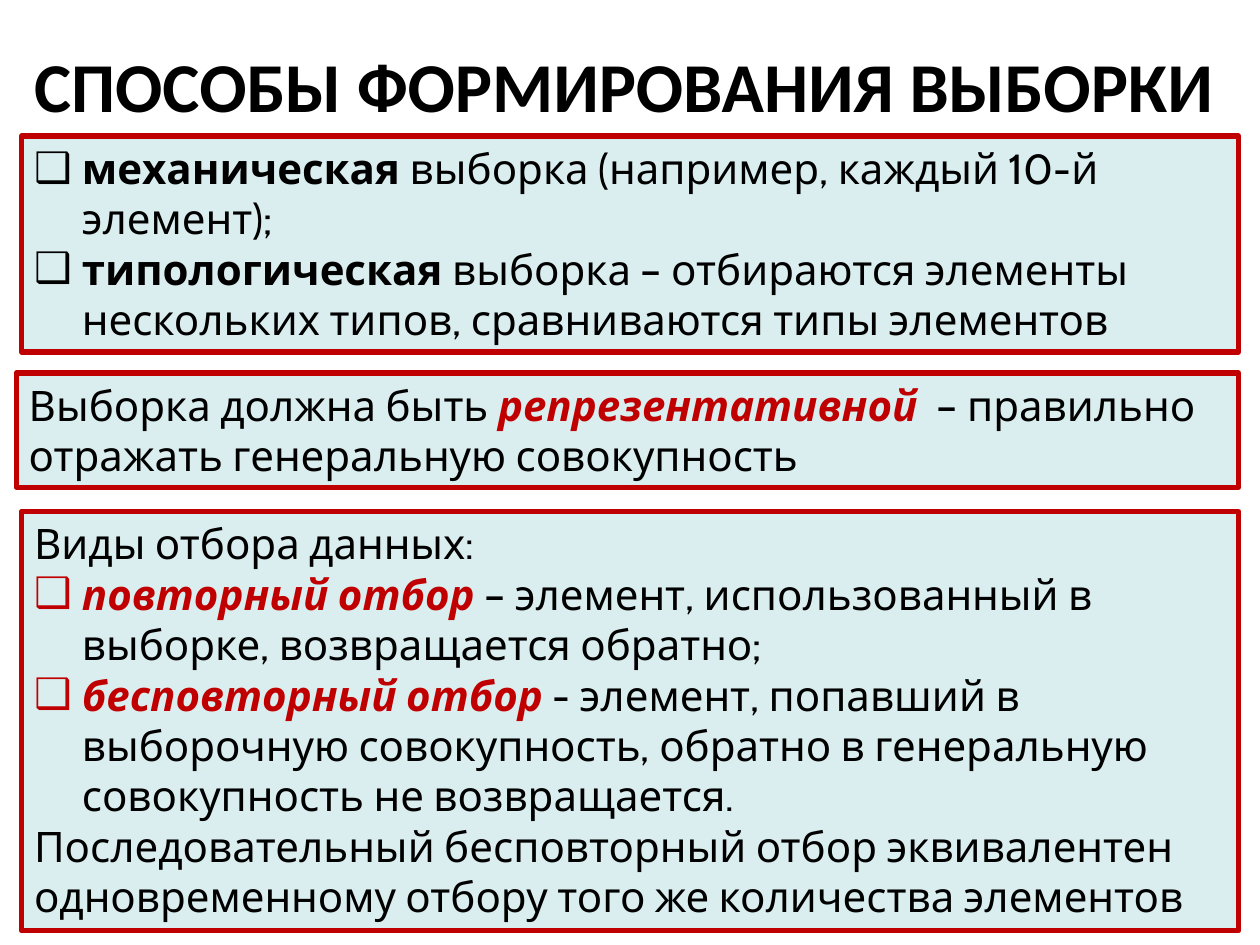
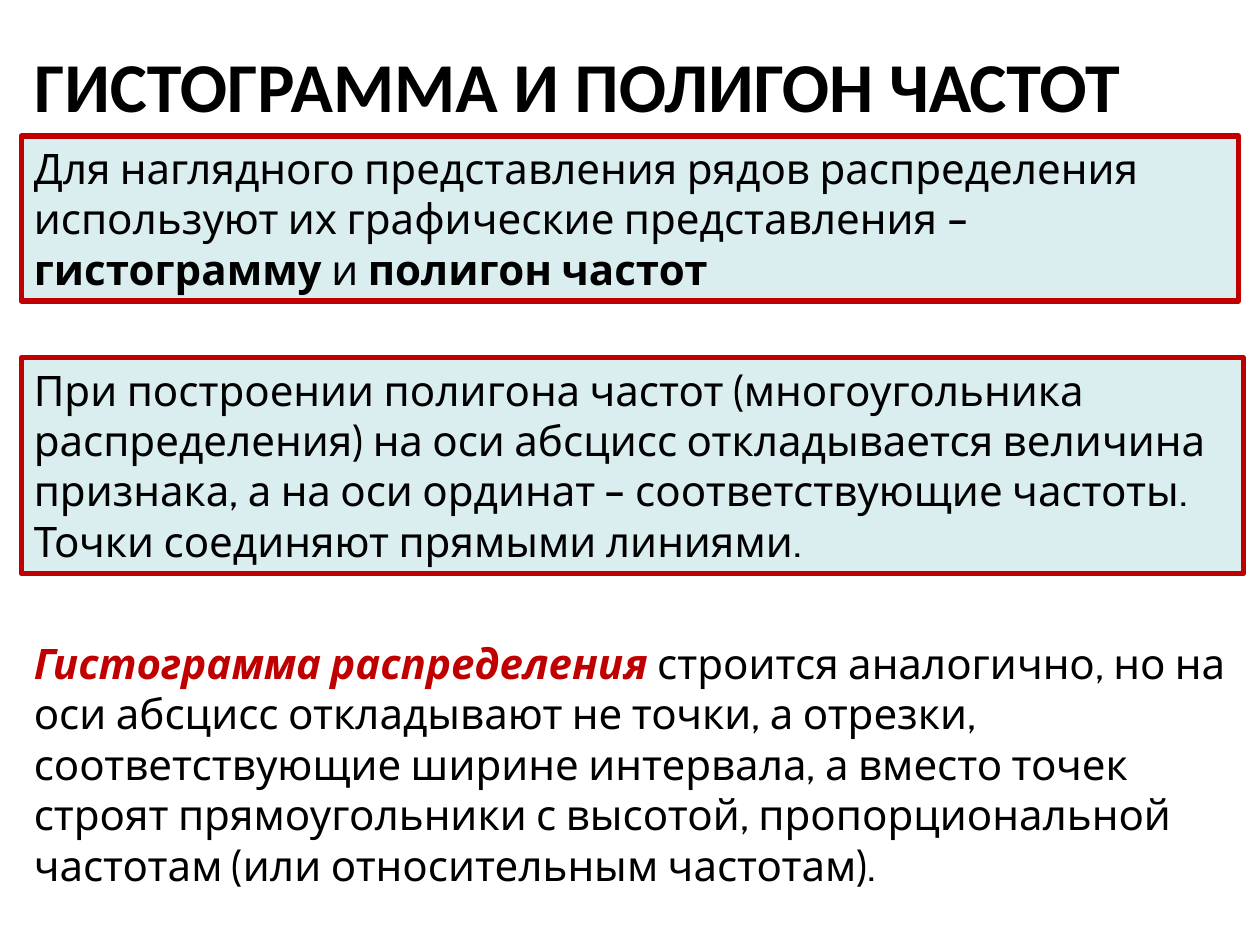
"""Build two slides on sampling methods and frequency charts."""
from lxml.etree import SubElement
from pptx import Presentation
from pptx.dml.color import RGBColor
from pptx.enum.shapes import MSO_SHAPE
from pptx.enum.text import MSO_ANCHOR, MSO_AUTO_SIZE, PP_ALIGN
from pptx.oxml.ns import qn
from pptx.util import Inches, Pt

BLACK = RGBColor(0x00, 0x00, 0x00)
RED = RGBColor(0xC0, 0x00, 0x00)
PALE = RGBColor(0xDA, 0xED, 0xEF)

TITLE_FONT, TITLE_SIZE = "Calibri", 40
BODY_FONT, BODY_SIZE = "Cabin", 24
SLIDE_W, SLIDE_H = 10, 7.5
LEFT, RIGHT = 0.17, 9.83
TITLE_BOX = (LEFT, 0.29, 9.64, 0.77)
LINE_H = BODY_SIZE * 1.21 / 72
PADDING = 0.1
INDENT = 0.38
BULLET = "❑"
TWO_CONTENT, TITLE_ONLY = 3, 5

PLAIN, BOLD, TERM = "plain", "bold", "term"
TEXT, ITEM = False, True

# Each box: kind, left, top, right, lines, paragraphs of (bulleted, runs).
SLIDES = [
    ("СПОСОБЫ ФОРМИРОВАНИЯ ВЫБОРКИ", TWO_CONTENT, [
        ("list", LEFT, 1.08, RIGHT, 4, [
            (ITEM, [("механическая", BOLD),
                    (" выборка (например, каждый 10-й элемент);", PLAIN)]),
            (ITEM, [("типологическая", BOLD),
                    (" выборка – отбираются элементы нескольких типов, "
                     "сравниваются типы элементов", PLAIN)]),
        ]),
        ("panel", 0.13, 2.96, RIGHT, 2, [
            (TEXT, [("Выборка должна быть ", PLAIN),
                    ("репрезентативной", TERM),
                    ("  – правильно отражать генеральную совокупность", PLAIN)]),
        ]),
        ("list", LEFT, 4.06, RIGHT, 8, [
            (TEXT, [("Виды отбора данных:", PLAIN)]),
            (ITEM, [("повторный отбор ", TERM),
                    ("– элемент, использованный в выборке, "
                     "возвращается обратно;", PLAIN)]),
            (ITEM, [("бесповторный отбор", TERM),
                    (" - элемент, попавший в выборочную совокупность, обратно "
                     "в генеральную совокупность не возвращается.", PLAIN)]),
            (TEXT, [("Последовательный бесповторный отбор эквивалентен "
                     "одновременному отбору того же количества элементов", PLAIN)]),
        ]),
    ]),
    ("ГИСТОГРАММА И ПОЛИГОН ЧАСТОТ", TITLE_ONLY, [
        ("panel", LEFT, 1.08, RIGHT, 3, [
            (TEXT, [("Для наглядного представления рядов распределения "
                     "используют их графические представления – ", PLAIN),
                    ("гистограмму", BOLD), (" и ", PLAIN),
                    ("полигон частот", BOLD)]),
        ]),
        ("panel", LEFT, 2.84, 9.87, 4, [
            (TEXT, [("При построении полигона частот (многоугольника "
                     "распределения) на оси абсцисс откладывается величина "
                     "признака, а на оси ординат – соответствующие частоты. "
                     "Точки соединяют прямыми линиями.", PLAIN)]),
        ]),
        ("note", LEFT, 5.01, 9.87, 5, [
            (TEXT, [("Гистограмма распределения", TERM),
                    (" строится аналогично, но на оси абсцисс откладывают не "
                     "точки, а отрезки, соответствующие ширине интервала, а "
                     "вместо точек строят прямоугольники с высотой, "
                     "пропорциональной частотам (или относительным частотам).",
                     PLAIN)]),
        ]),
    ]),
]


def place(sp, left, top, width, height):
    sp.left, sp.top = Inches(left), Inches(top)
    sp.width, sp.height = Inches(width), Inches(height)


def prepare_frame(tf):
    tf.word_wrap = True
    tf.auto_size = MSO_AUTO_SIZE.NONE
    tf.vertical_anchor = MSO_ANCHOR.TOP


def format_run(r, font, size, style):
    r.font.name, r.font.size = font, Pt(size)
    r.font.bold = style != PLAIN
    r.font.italic = style == TERM
    r.font.color.rgb = RED if style == TERM else BLACK


def format_paragraph(p, bulleted):
    p.alignment = PP_ALIGN.LEFT
    p.space_before = Pt(0)
    pPr = p._p.get_or_add_pPr()
    indent = Inches(INDENT) if bulleted else 0
    pPr.set("marL", str(indent))
    pPr.set("indent", str(-indent))
    if bulleted:
        SubElement(pPr, qn("a:buChar")).set("char", BULLET)
    else:
        SubElement(pPr, qn("a:buNone"))


def add_title(s, text):
    sp = s.shapes.title
    place(sp, *TITLE_BOX)
    tf = sp.text_frame
    tf.text = text
    prepare_frame(tf)
    p = tf.paragraphs[0]
    p.alignment = PP_ALIGN.LEFT
    format_run(p.runs[0], TITLE_FONT, TITLE_SIZE, BOLD)


def add_box(s, bodies, kind, left, top, right, lines, paragraphs):
    box = (left, top, right - left, lines * LINE_H + PADDING)
    if kind == "list":
        sp = next(bodies)
        place(sp, *box)
    elif kind == "panel":
        sp = s.shapes.add_shape(MSO_SHAPE.RECTANGLE, *map(Inches, box))
        sp.shadow.inherit = False
    else:
        sp = s.shapes.add_textbox(*map(Inches, box))
    if kind != "note":
        sp.fill.solid()
        sp.fill.fore_color.rgb = PALE
        sp.line.color.rgb = RED
        sp.line.width = Pt(3)
    tf = sp.text_frame
    prepare_frame(tf)
    for i, (bulleted, runs) in enumerate(paragraphs):
        p = tf.add_paragraph() if i else tf.paragraphs[0]
        format_paragraph(p, bulleted)
        for text, style in runs:
            r = p.add_run()
            r.text = text
            format_run(r, BODY_FONT, BODY_SIZE, style)


def main():
    prs = Presentation()
    prs.slide_width, prs.slide_height = Inches(SLIDE_W), Inches(SLIDE_H)
    for title, layout, boxes in SLIDES:
        s = prs.slides.add_slide(prs.slide_layouts[layout])
        add_title(s, title)
        bodies = iter(list(s.placeholders)[1:])
        for box in boxes:
            add_box(s, bodies, *box)
    prs.save("out.pptx")


if __name__ == "__main__":
    main()
